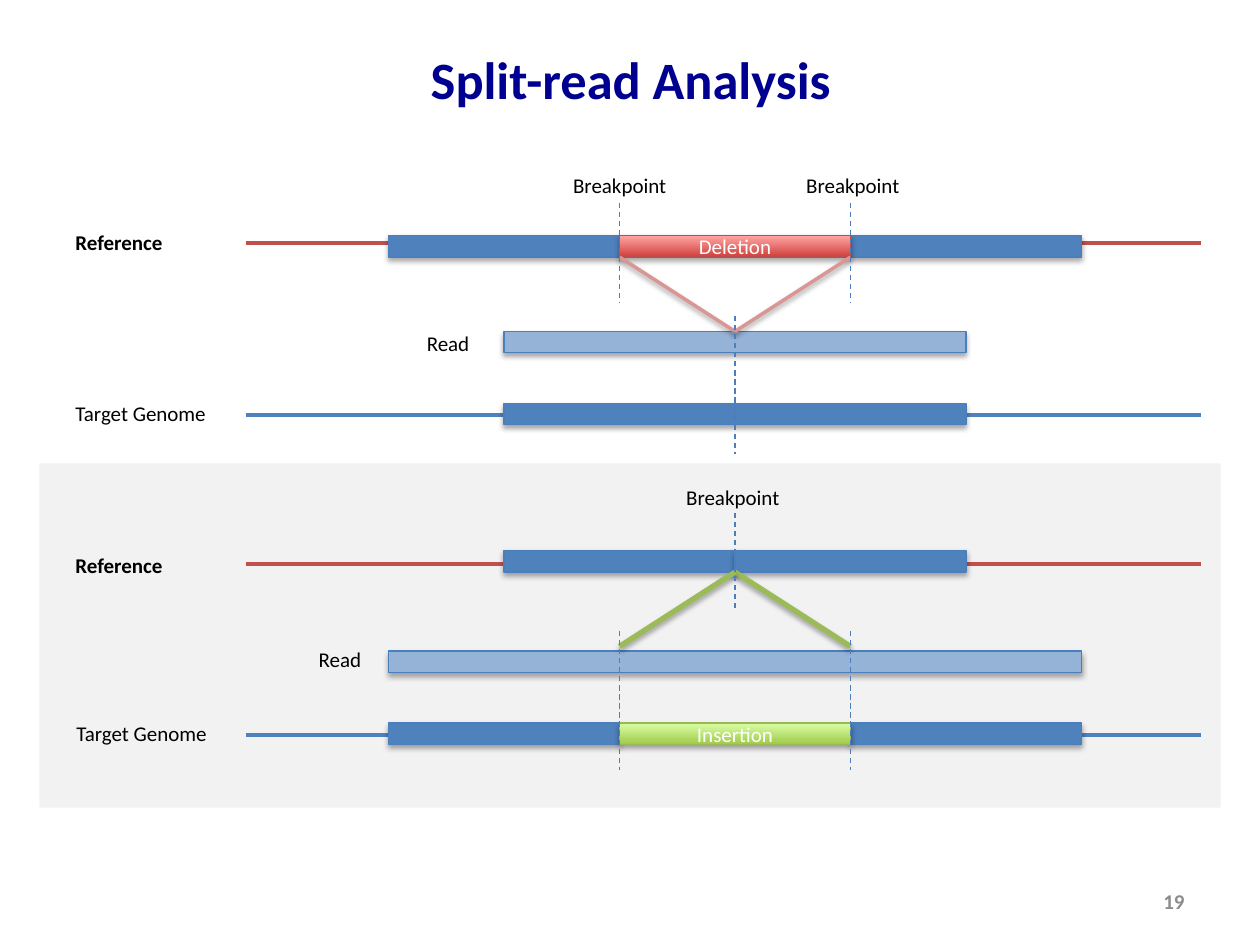
from dataclasses import dataclass

from lxml.etree import SubElement
from pptx import Presentation
from pptx.dml.color import RGBColor
from pptx.enum.dml import MSO_LINE
from pptx.enum.shapes import MSO_CONNECTOR, MSO_SHAPE
from pptx.enum.text import MSO_ANCHOR, MSO_AUTO_SIZE, PP_ALIGN
from pptx.oxml.ns import qn
from pptx.util import Pt


@dataclass(frozen=True)
class Theme:
    font: str = "Calibri"
    title_size: float = 30
    text_size: float = 12
    title: str = "000090"
    text: str = "000000"
    inverse: str = "FFFFFF"
    number: str = "8C8C8C"
    panel: str = "F2F2F2"
    reference: str = "C0504D"
    genome: str = "4F81BD"
    read: str = "95B3D7"
    edge: str = "4B7EBC"
    deletion: tuple = ("D1403C", "FFA6A5")
    deletion_edge: str = "BF4C48"
    insertion: tuple = ("A0CA4A", "DAFFA5")
    insertion_edge: str = "98B955"
    deletion_link: str = "D99694"
    insertion_link: str = "9BBB59"


@dataclass(frozen=True)
class Bar:
    """A bar from one grid column to another; two fills make a gradient."""
    start: int
    end: int
    top: float
    fill: str | tuple
    edge: str
    text: str = ""


@dataclass(frozen=True)
class Line:
    x1: float
    y1: float
    x2: float
    y2: float
    color: str
    width: float
    dashed: bool = False
    shadow: bool = False


@dataclass(frozen=True)
class Label:
    text: str
    left: float
    top: float
    width: float
    bold: bool = False


THEME = Theme()
BAR_HEIGHT = 12.24
AXIS_LEFT, AXIS_RIGHT = 140.4, 686.2


def col(n: int) -> float:
    """Horizontal position of a half-segment column, counted from the centre."""
    return 420 + 66 * n


def rgb(color: str) -> RGBColor:
    return RGBColor.from_string(color)


def style(p, color: str, size: float = THEME.text_size, bold: bool = False) -> None:
    p.font.name, p.font.size, p.font.bold = THEME.font, Pt(size), bold
    p.font.color.rgb = rgb(color)


def add_effects(sp, shadow: bool) -> None:
    """Replace the theme effect by a soft shadow below, or by nothing."""
    sp_pr = sp._element.spPr
    for old in sp_pr.findall(qn("a:effectLst")):
        sp_pr.remove(old)
    effects = SubElement(sp_pr, qn("a:effectLst"))
    if shadow:
        outer = SubElement(effects, qn("a:outerShdw"), blurRad=str(Pt(3.1)),
                           dist=str(Pt(1.8)), dir="5400000", rotWithShape="0")
        black = SubElement(outer, qn("a:srgbClr"), val="000000")
        SubElement(black, qn("a:alpha"), val="35000")


def add_panel(s) -> None:
    sp = s.shapes.add_shape(MSO_SHAPE.RECTANGLE, Pt(22.5), Pt(264.8), Pt(675), Pt(196.7))
    sp.shadow.inherit = False
    sp.fill.solid()
    sp.fill.fore_color.rgb = rgb(THEME.panel)
    sp.line.fill.background()


def add_bar(s, bar: Bar) -> None:
    left, right = col(bar.start), col(bar.end)
    sp = s.shapes.add_shape(MSO_SHAPE.RECTANGLE, Pt(left), Pt(bar.top),
                            Pt(right - left), Pt(BAR_HEIGHT))
    if isinstance(bar.fill, tuple):
        sp.fill.gradient()
        sp.fill.gradient_angle = 90
        for stop, color, position in zip(sp.fill.gradient_stops, bar.fill, (0, 1)):
            stop.color.rgb, stop.position = rgb(color), position
    else:
        sp.fill.solid()
        sp.fill.fore_color.rgb = rgb(bar.fill)
    sp.line.color.rgb, sp.line.width = rgb(bar.edge), Pt(0.75)
    add_effects(sp, shadow=True)
    if bar.text:
        tf = sp.text_frame
        tf.vertical_anchor = MSO_ANCHOR.MIDDLE
        p = tf.paragraphs[0]
        p.text, p.alignment = bar.text, PP_ALIGN.CENTER
        style(p, THEME.inverse)


def add_line(s, line: Line) -> None:
    cx = s.shapes.add_connector(MSO_CONNECTOR.STRAIGHT, Pt(line.x1), Pt(line.y1),
                                Pt(line.x2), Pt(line.y2))
    cx.line.color.rgb, cx.line.width = rgb(line.color), Pt(line.width)
    if line.dashed:
        cx.line.dash_style = MSO_LINE.DASH
    add_effects(cx, line.shadow)


def add_label(s, label: Label) -> None:
    tb = s.shapes.add_textbox(Pt(label.left), Pt(label.top), Pt(label.width), Pt(21.6))
    tf = tb.text_frame
    tf.word_wrap, tf.auto_size = False, MSO_AUTO_SIZE.SHAPE_TO_FIT_TEXT
    p = tf.paragraphs[0]
    p.text = label.text
    style(p, THEME.text, bold=label.bold)


def add_title(s) -> None:
    title = s.shapes.title
    title.left, title.top, title.width, title.height = Pt(36.5), Pt(0), Pt(648), Pt(90)
    title.text_frame.vertical_anchor = MSO_ANCHOR.MIDDLE
    p = title.text_frame.paragraphs[0]
    p.text, p.alignment = "Split-read Analysis", PP_ALIGN.CENTER
    style(p, THEME.title, THEME.title_size, bold=True)


def add_slide_number(s) -> None:
    tb = s.shapes.add_textbox(Pt(516), Pt(500.5), Pt(168), Pt(28.75))
    tf = tb.text_frame
    tf.word_wrap, tf.vertical_anchor = True, MSO_ANCHOR.MIDDLE
    p = tf.paragraphs[0]
    p.text, p.alignment = "19", PP_ALIGN.RIGHT
    style(p, THEME.number, bold=True)


def axis(y: float, color: str) -> Line:
    return Line(AXIS_LEFT, y, AXIS_RIGHT, y, color, 2.25)


def link(n1: int, y1: float, n2: int, y2: float, color: str, width: float) -> Line:
    return Line(col(n1), y1, col(n2), y2, color, width, shadow=True)


def marker(n: int, top: float, bottom: float) -> Line:
    return Line(col(n), top, col(n), bottom, THEME.edge, 0.75, dashed=True)


T = THEME
AXES = [axis(139, T.reference), axis(236.9, T.genome),
        axis(322.5, T.reference), axis(419.8, T.genome)]
BARS = [
    Bar(-3, -1, 134.6, T.genome, T.edge),
    Bar(1, 3, 134.6, T.genome, T.edge),
    Bar(-1, 1, 134.6, T.deletion, T.deletion_edge, "Deletion"),
    Bar(-2, 2, 189.4, T.read, T.edge),
    Bar(-2, 2, 230.5, T.genome, T.edge),
    Bar(-2, 0, 314.7, T.genome, T.edge),
    Bar(0, 2, 314.7, T.genome, T.edge),
    Bar(-3, 3, 372, T.read, T.edge),
    Bar(-3, -1, 413.2, T.genome, T.edge),
    Bar(1, 3, 413.2, T.genome, T.edge),
    Bar(-1, 1, 413.2, T.insertion, T.insertion_edge, "Insertion"),
]
LINKS = [link(n, 146.9, 0, 189.4, T.deletion_link, 2) for n in (-1, 1)]
LINKS += [link(0, 326.9, n, 369.4, T.insertion_link, 3) for n in (1, -1)]
MARKERS = [marker(n, top, bottom) for n in (-1, 1)
           for top, bottom in ((116, 172.8), (360.7, 440))]
MARKERS += [marker(0, 180.7, 259.2), marker(0, 293, 349.2)]
LABELS = [
    Label("Reference", 36, 127.6, 64.8, bold=True),
    Label("Read", 236.8, 185.2, 38.9),
    Label("Target Genome", 36, 225.5, 90),
    Label("Reference", 36, 312.5, 64.8, bold=True),
    Label("Read", 175, 366, 38.9),
    Label("Target Genome", 36.5, 408.3, 90),
    Label("Breakpoint", 320.4, 95, 68.4),
    Label("Breakpoint", 453.6, 95, 68.4),
    Label("Breakpoint", 385, 273.2, 68.4),
]


def main() -> None:
    prs = Presentation()
    prs.slide_width, prs.slide_height = Pt(720), Pt(540)
    s = prs.slides.add_slide(prs.slide_layouts[5])
    add_title(s)
    add_panel(s)
    for line in AXES:
        add_line(s, line)
    for bar in BARS:
        add_bar(s, bar)
    for line in LINKS + MARKERS:
        add_line(s, line)
    for label in LABELS:
        add_label(s, label)
    add_slide_number(s)
    prs.save("out.pptx")


if __name__ == "__main__":
    main()
